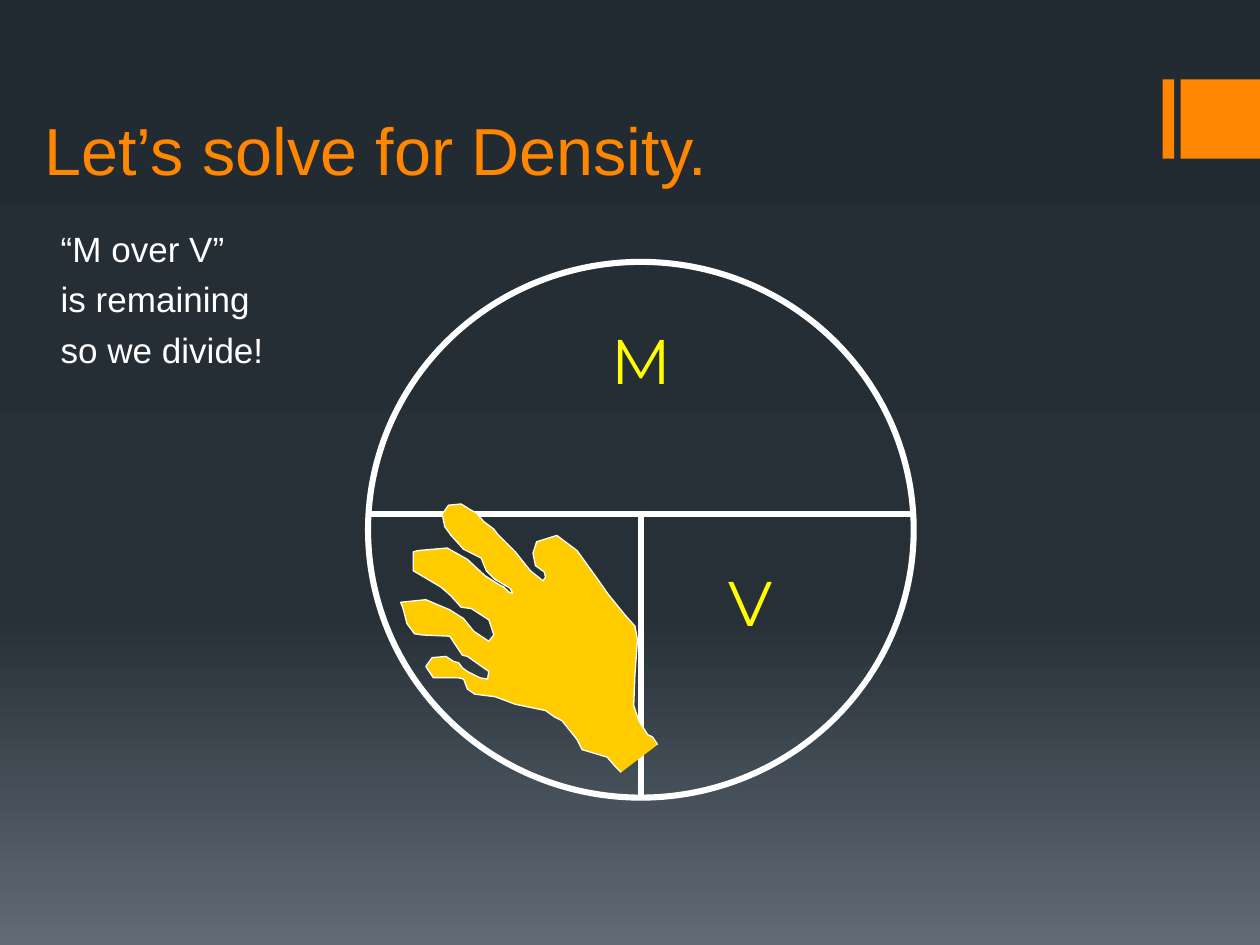
from copy import deepcopy
from dataclasses import dataclass

from lxml import etree
from pptx import Presentation
from pptx.dml.color import RGBColor
from pptx.enum.shapes import MSO_CONNECTOR, MSO_SHAPE
from pptx.enum.text import MSO_ANCHOR, MSO_AUTO_SIZE, PP_ALIGN
from pptx.oxml.ns import qn
from pptx.util import Cm, Pt

RECT, OVAL = MSO_SHAPE.RECTANGLE, MSO_SHAPE.OVAL
STRAIGHT = MSO_CONNECTOR.STRAIGHT
TOP, BOTTOM = MSO_ANCHOR.TOP, MSO_ANCHOR.BOTTOM
LEFT, CENTER = PP_ALIGN.LEFT, PP_ALIGN.CENTER
NO_FIT = MSO_AUTO_SIZE.NONE


@dataclass(frozen=True)
class Theme:
    accent: str = "FF8600"
    ink: str = "FFFFFF"
    letter: str = "FFFF00"
    hand: str = "FFCC00"
    backdrop: tuple = ((0, "232B32"), (0.65, "273037"), (1, "606B76"))
    font: str = "Arial"
    letter_font: str = "Montserrat"
    title_size: int = 38
    body_size: int = 20
    letter_size: int = 36


THEME = Theme()

# Outline of the hand, in hundredths of an inch from the slide corner
HAND_UNIT = Cm(2.54) / 100
HAND = [
    # wrist and outer edge
    (522, 591), (518, 585), (514, 583), (509, 575), (507, 572), (503, 560),
    (504, 535), (506, 508), (504, 497), (496, 488), (483, 472), (471, 455),
    # thumb
    (458, 437), (442, 425), (426, 430), (423, 439), (425, 449), (432, 454),
    (433, 458), (431, 461), (421, 453), (409, 438), (395, 424),
    # first finger
    (392, 420), (384, 414), (378, 407), (374, 405), (366, 400), (356, 401),
    (351, 408), (353, 418), (358, 425), (368, 436), (382, 443), (386, 453),
    (393, 460), (405, 467), (407, 471), (404, 470), (400, 466), (396, 464),
    # second finger
    (385, 457), (371, 444), (355, 435), (332, 437), (328, 438), (328, 453),
    (350, 466), (358, 473), (366, 482), (374, 483), (388, 492), (392, 504),
    (388, 509), (376, 501),
    # third finger
    (368, 491), (357, 484), (338, 476), (318, 478), (320, 483), (323, 495),
    (329, 503), (335, 504), (357, 505), (367, 520), (371, 521), (388, 533),
    (387, 539), (381, 538), (371, 533),
    # little finger and back to the wrist
    (367, 530), (364, 526), (360, 525), (354, 521), (343, 522), (338, 529),
    (344, 538), (364, 538), (368, 539), (371, 547), (377, 551), (393, 553),
    (409, 559), (433, 564), (440, 569), (446, 572), (458, 587), (460, 591),
    (462, 595), (482, 601), (488, 608), (493, 613),
]


def rgb(color):
    return RGBColor.from_string(color)


def write(tf, text, *, size, color, font, align=LEFT, anchor=TOP, wrap=True,
          before=0, indent=None):
    """Fill a text frame, one paragraph per line; indent is (margin, first line)."""
    tf.auto_size = NO_FIT
    tf.word_wrap = wrap
    tf.vertical_anchor = anchor
    tf.text = text
    for p in tf.paragraphs:
        p.alignment = align
        p.space_before = Pt(before)
        if indent:
            pPr = p._p.get_or_add_pPr()
            pPr.set("marL", str(Cm(indent[0])))
            pPr.set("indent", str(Cm(indent[1])))
            etree.SubElement(pPr, qn("a:buNone"))
        for r in p.runs:
            r.font.size = Pt(size)
            r.font.name = font
            r.font.color.rgb = rgb(color)


class Deck:
    """Holds the theme and the slide being drawn; boxes are in centimetres."""

    def __init__(self, prs, theme):
        self.theme = theme
        self.s = prs.slides.add_slide(prs.slide_layouts[1])

    def background(self):
        fill = self.s.background.fill
        fill.gradient()
        fill.gradient_angle = 270
        gs = fill._fill._gradFill.gsLst
        gs.insert(1, deepcopy(gs[0]))
        for stop, (position, color) in zip(fill.gradient_stops, self.theme.backdrop):
            stop.position = position
            stop.color.rgb = rgb(color)

    def placeholder(self, index, box, text, **style):
        sp = self.s.placeholders[index]
        sp.left, sp.top, sp.width, sp.height = map(Cm, box)
        write(sp.text_frame, text, font=self.theme.font, **style)

    def letter(self, box, text):
        t = self.theme
        sp = self.s.shapes.add_textbox(*map(Cm, box))
        write(sp.text_frame, text, size=t.letter_size, color=t.letter,
              font=t.letter_font, align=CENTER, wrap=False)

    def paint(self, sp, fill, line, width):
        sp.shadow.inherit = False
        if fill:
            sp.fill.solid()
            sp.fill.fore_color.rgb = rgb(fill)
        else:
            sp.fill.background()
        if line:
            sp.line.color.rgb = rgb(line)
            sp.line.width = Pt(width)
        else:
            sp.line.fill.background()

    def shape(self, kind, box, fill=None, line=None, width=0):
        sp = self.s.shapes.add_shape(kind, *map(Cm, box))
        self.paint(sp, fill, line, width)

    def outline(self, points, unit, fill, line, width):
        builder = self.s.shapes.build_freeform(*points[0], scale=unit)
        builder.add_line_segments(points[1:], close=False)
        self.paint(builder.convert_to_shape(), fill, line, width)

    def line(self, start, end, color, width):
        c = self.s.shapes.add_connector(STRAIGHT, *map(Cm, start + end))
        c.line.color.rgb = rgb(color)
        c.line.width = Pt(width)
        etree.SubElement(c._element.spPr, qn("a:effectLst"))


def main():
    prs = Presentation()
    prs.slide_width, prs.slide_height = Cm(25.4), Cm(19.05)
    t = THEME
    deck = Deck(prs, t)
    deck.background()

    for left, width in ((23.44, 0.23), (23.8, 1.6)):
        deck.shape(RECT, (left, 1.6, width, 1.6), fill=t.accent)

    deck.placeholder(0, (0.64, 0.76, 24.13, 3.18), "Let’s solve for Density.",
                     size=t.title_size, color=t.accent, anchor=BOTTOM)
    deck.placeholder(1, (0.84, 4.45, 23.29, 12.57),
                     "“M over V”\nis remaining\nso we divide!",
                     size=t.body_size, color=t.ink, before=5, indent=(0.64, -0.51))

    left, top, width, height = circle = (7.42, 5.28, 11, 10.8)
    middle, divider = left + width / 2, 10.36
    deck.shape(OVAL, circle, line=t.ink, width=3.5)
    deck.letter((12.07, 6.35, 1.7, 2.74), "M")
    deck.letter((14.17, 11.23, 1.9, 2.74), "V")
    deck.line((left, divider), (left + width, divider), t.ink, 3.25)
    deck.line((middle, divider), (middle, top + height), t.ink, 3.25)
    deck.outline(HAND, HAND_UNIT, t.hand, t.ink, 0.75)

    prs.save("out.pptx")


if __name__ == "__main__":
    main()
